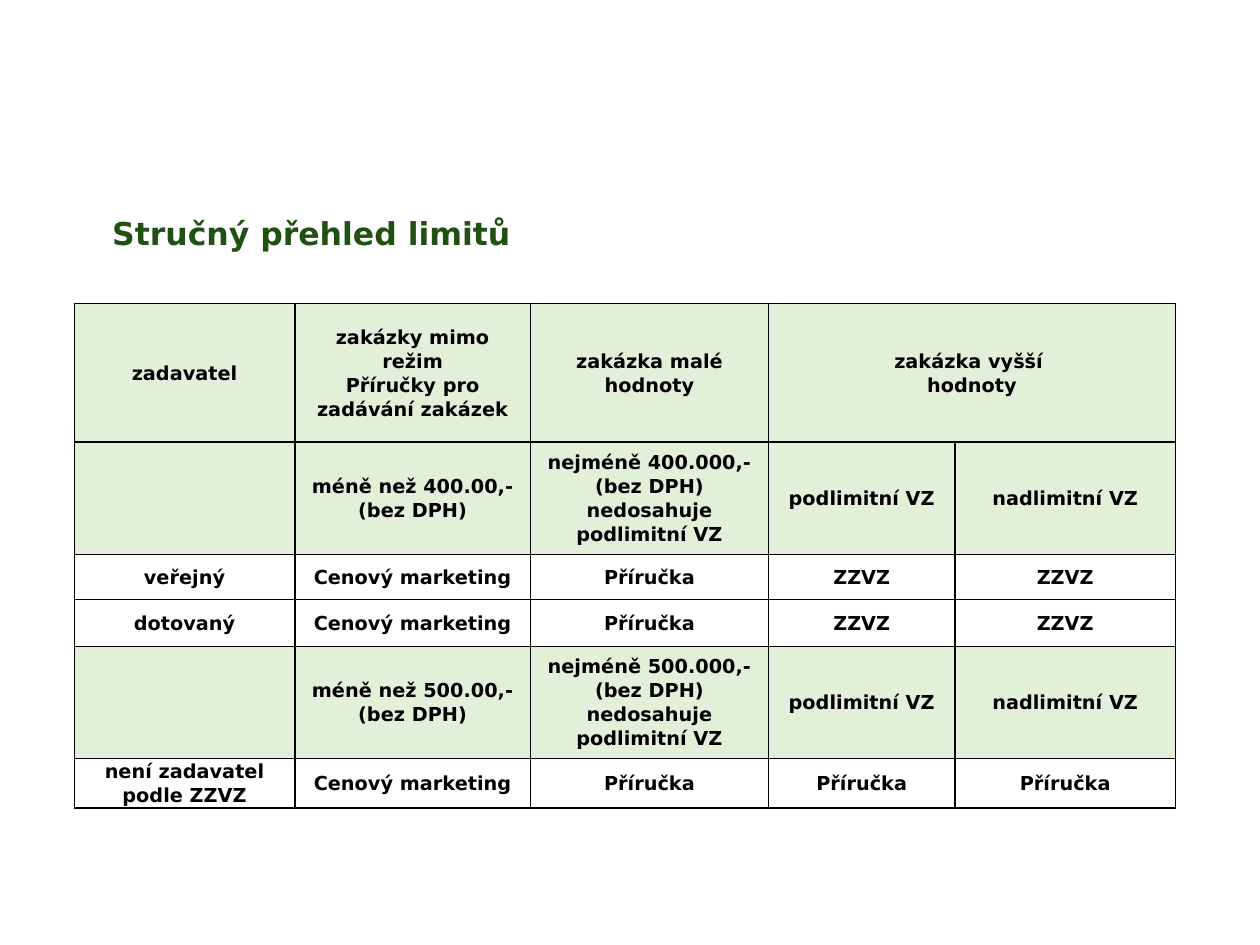
from dataclasses import dataclass

from lxml.etree import SubElement
from pptx import Presentation
from pptx.dml.color import RGBColor
from pptx.enum.text import MSO_ANCHOR as Anchor, MSO_AUTO_SIZE as AutoSize, PP_ALIGN as Align
from pptx.oxml.ns import qn
from pptx.util import Inches, Pt

FONT = "DejaVu Sans"
BLACK, TITLE_GREEN, PALE_GREEN = "000000", "215112", "E2EFD9"
COLUMN_WIDTHS = (1.75, 1.87, 1.89, 1.48, 1.75)


@dataclass
class LimitRow:
    height: float
    texts: tuple[str, ...]
    shaded: bool = False


def color(value: str) -> RGBColor:
    return RGBColor.from_string(value)


def set_font(para, size: float, hex_color: str) -> None:
    font = para.font
    font.name, font.size, font.bold = FONT, Pt(size), True
    font.color.rgb = color(hex_color)


def limits_row(amount: str, lowest: str) -> LimitRow:
    return LimitRow(0.89, (
        "", f"méně než {amount},- (bez DPH)",
        f"nejméně {lowest},- (bez DPH)\nnedosahuje podlimitní VZ",
        "podlimitní VZ", "nadlimitní VZ"), shaded=True)


def regime_row(height: float, buyer: str, regime: str) -> LimitRow:
    return LimitRow(height, (buyer, "Cenový marketing", "Příručka", regime, regime))


def set_borders(cell, width: float = 1) -> None:
    properties = cell._tc.get_or_add_tcPr()
    for position, side in enumerate(("lnL", "lnR", "lnT", "lnB")):
        line = SubElement(properties, qn(f"a:{side}"), w=str(Pt(width)))
        fill = SubElement(line, qn("a:solidFill"))
        SubElement(fill, qn("a:srgbClr"), val=BLACK)
        properties.insert(position, line)  # borders come before the fill


def fill_cell(cell, text: str, shaded: bool) -> None:
    cell.margin_left = cell.margin_right = Inches(0.06)
    cell.margin_top = cell.margin_bottom = 0
    cell.vertical_anchor = Anchor.MIDDLE
    if shaded:
        cell.fill.solid()
        cell.fill.fore_color.rgb = color(PALE_GREEN)
    else:
        cell.fill.background()
    set_borders(cell)
    cell.text = text
    for para in cell.text_frame.paragraphs:
        para.alignment, para.line_spacing = Align.CENTER, 1.07
        set_font(para, 11, BLACK)


def add_title(page, text: str) -> None:
    box = page.shapes.title
    box.left, box.top, box.width, box.height = map(Inches, (0.75, 1.6, 3.45, 0.49))
    frame = box.text_frame
    frame.text = text
    frame.word_wrap, frame.auto_size = False, AutoSize.SHAPE_TO_FIT_TEXT
    frame.vertical_anchor = Anchor.BOTTOM
    frame.margin_left = frame.margin_right = Inches(0.14)
    frame.margin_top = frame.margin_bottom = Inches(0.09)
    para = frame.paragraphs[0]
    para.alignment = Align.LEFT
    set_font(para, 18, TITLE_GREEN)


def add_limits_table(page, rows: list[LimitRow]) -> None:
    table = page.shapes.add_table(
        len(rows), len(COLUMN_WIDTHS), Inches(0.59), Inches(2.41),
        Inches(sum(COLUMN_WIDTHS)), Inches(sum(row.height for row in rows))).table
    table.first_row = table.horz_banding = False
    for column, width in zip(table.columns, COLUMN_WIDTHS):
        column.width = Inches(width)
    for row_index, row in enumerate(rows):
        table.rows[row_index].height = Inches(row.height)
        for column_index, text in enumerate(row.texts):
            fill_cell(table.cell(row_index, column_index), text, row.shaded)
    # The last heading covers both columns of higher-value contracts
    table.cell(0, 3).merge(table.cell(0, 4))


def main() -> None:
    deck = Presentation()
    deck.slide_width, deck.slide_height = Inches(10), Inches(7.5)
    page = deck.slides.add_slide(deck.slide_layouts[5])
    add_title(page, "Stručný přehled limitů")
    add_limits_table(page, [
        LimitRow(1.1, (
            "zadavatel", "zakázky mimo režim\nPříručky pro zadávání zakázek",
            "zakázka malé hodnoty", "zakázka vyšší \nhodnoty", ""), shaded=True),
        limits_row("400.00", "400.000"),
        regime_row(0.36, "veřejný", "ZZVZ"),
        regime_row(0.37, "dotovaný", "ZZVZ"),
        limits_row("500.00", "500.000"),
        regime_row(0.37, "není zadavatel podle ZZVZ", "Příručka"),
    ])
    deck.save("out.pptx")


if __name__ == "__main__":
    main()
